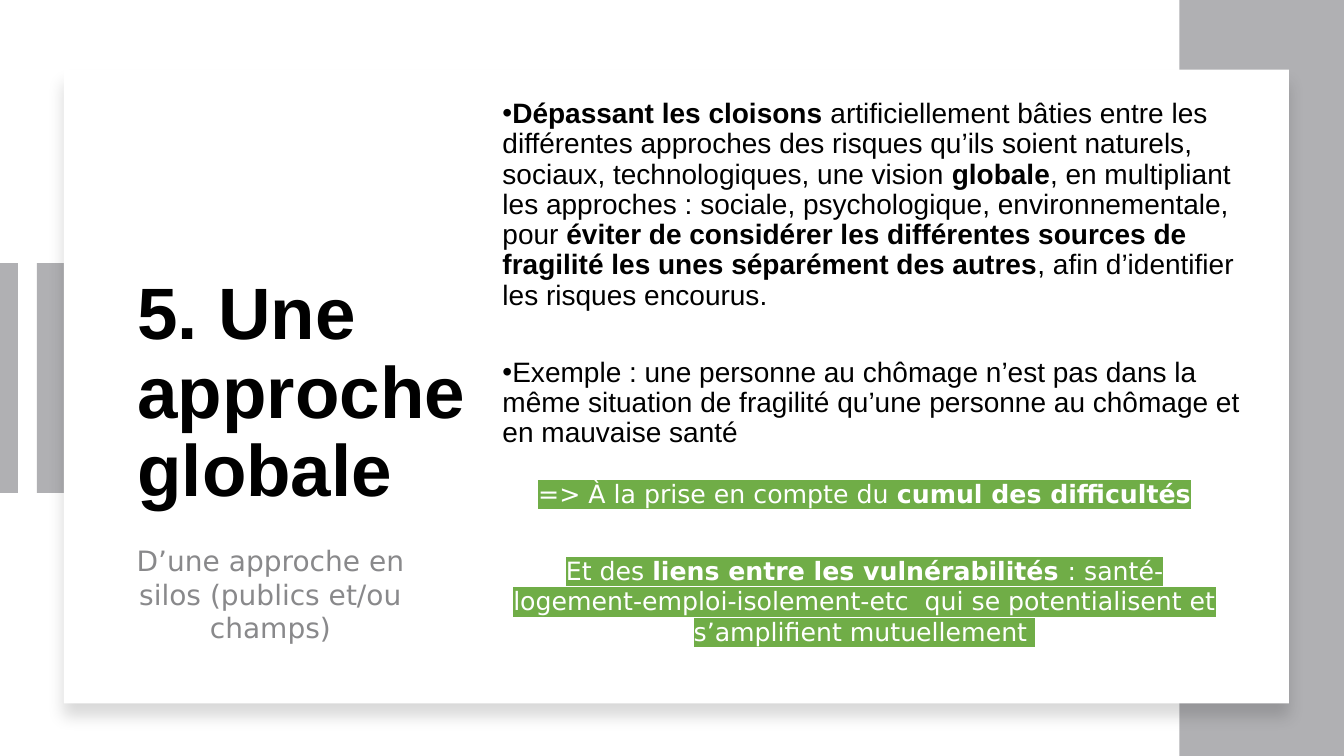
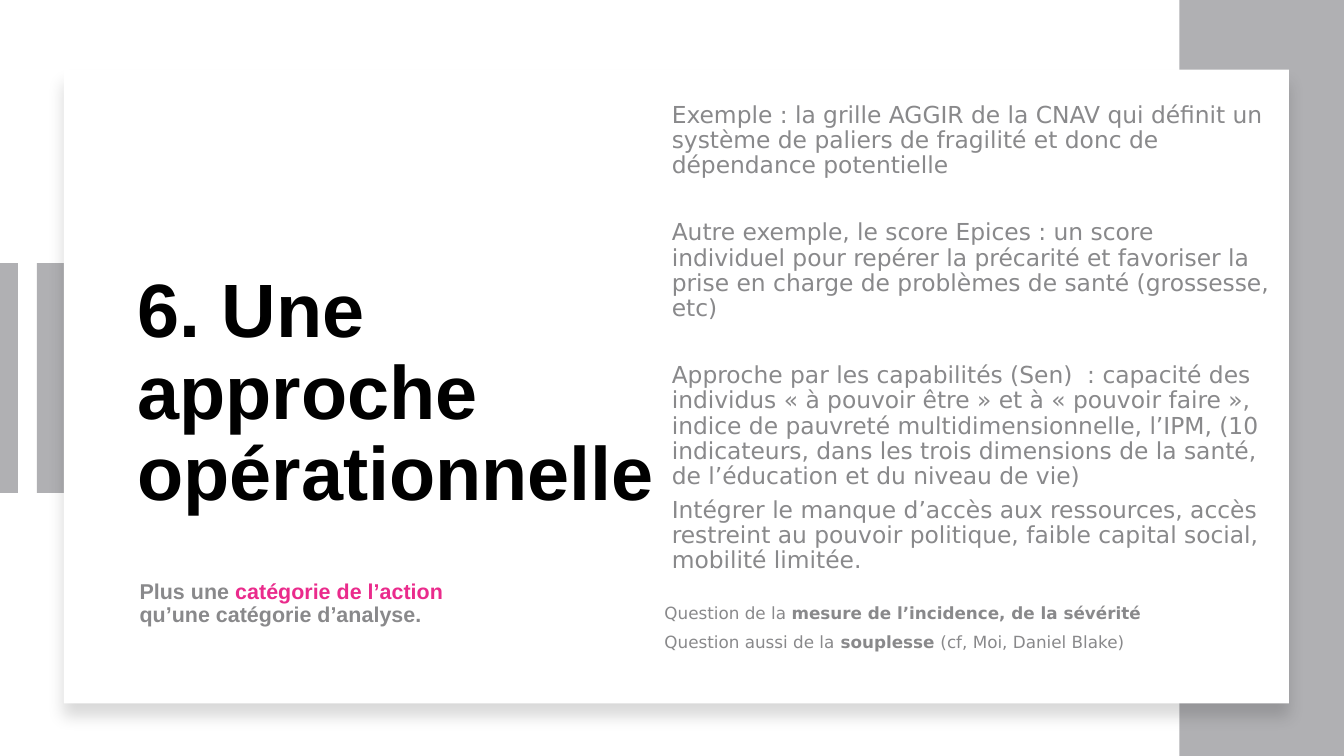
from lxml.etree import SubElement
from pptx import Presentation
from pptx.dml.color import RGBColor
from pptx.enum.shapes import MSO_CONNECTOR as Connector, MSO_SHAPE as Preset
from pptx.enum.text import MSO_ANCHOR as Anchor, PP_ALIGN as Align
from pptx.oxml.ns import qn
from pptx.util import Inches, Pt

COLORS = {
    "paper": "FFFFFF",
    "band": "B0B0B3",
    "ink": "000000",
    "muted": "89898B",
    "accent": "EA2B8C",
    "marker": "70AD47",
}
HEADING_FONT = "Arial"
TEXT_FONT = "DejaVu Sans"


def color(name):
    return RGBColor.from_string(COLORS[name])


def add_color(parent, name):
    return SubElement(parent, qn("a:srgbClr"), val=COLORS[name])


def write_runs(paragraph, text, size=20, font=TEXT_FONT, ink="muted", bold=False,
               marker=None, accent=None):
    """Write text whose **marked** parts take the accent colour, or else the bold weight."""
    for position, part in enumerate(text.split("**")):
        if not part:
            continue
        marked = position % 2 == 1
        run = paragraph.add_run()
        run.text = part
        run.font.size = Pt(size)
        run.font.name = font
        run.font.bold = bold or marked
        run.font.color.rgb = color(accent if marked and accent else ink)
        if marker:
            properties = run._r.get_or_add_rPr()
            highlight = SubElement(properties, qn("a:highlight"))
            add_color(highlight, marker)
            properties.find(qn("a:solidFill")).addnext(highlight)


class Deck:
    """Holds the style and the current slide; lengths are percentages of the slide."""

    def __init__(self):
        self.presentation = Presentation()
        self.presentation.slide_width = Inches(13.33)
        self.presentation.slide_height = Inches(7.5)
        self.slide = None

    def across(self, share):
        return round(self.presentation.slide_width * share / 100)

    def down(self, share):
        return round(self.presentation.slide_height * share / 100)

    def frame(self, left, top, width, height):
        return self.across(left), self.down(top), self.across(width), self.down(height)

    def block(self, *place, fill="band"):
        shape = self.slide.shapes.add_shape(Preset.RECTANGLE, *self.frame(*place))
        shape.shadow.inherit = False
        shape.fill.solid()
        shape.fill.fore_color.rgb = color(fill)
        shape.line.fill.background()
        return shape

    def stripe(self, left, top, height):
        x, y, _, length = self.frame(left, top, 0, height)
        connector = self.slide.shapes.add_connector(Connector.STRAIGHT, x, y, x, y + length)
        connector.line.color.rgb = color("band")
        connector.line.width = Pt(14)
        SubElement(connector._element.spPr, qn("a:effectLst"))

    def card(self, *place):
        shape = self.block(*place, fill="paper")
        effects = shape._element.spPr.find(qn("a:effectLst"))
        shadow = SubElement(effects, qn("a:outerShdw"), blurRad=str(Pt(11)),
                            dist=str(Pt(10)), dir="5400000", algn="t", rotWithShape="0")
        SubElement(add_color(shadow, "ink"), qn("a:alpha"), val="15000")

    def text(self, place, paragraphs, anchor=Anchor.TOP, align=Align.LEFT, spacing=None,
             gaps=(), bullet=False, **style):
        frame = self.slide.shapes.add_textbox(*self.frame(*place)).text_frame
        frame.word_wrap = True
        frame.vertical_anchor = anchor
        for index, content in enumerate(paragraphs):
            paragraph = frame.add_paragraph() if index else frame.paragraphs[0]
            if bullet:
                properties = paragraph._p.get_or_add_pPr()
                properties.set("marL", "0")
                properties.set("indent", "0")
                SubElement(properties, qn("a:buFont"), typeface=HEADING_FONT)
                SubElement(properties, qn("a:buChar"), char="•")
            paragraph.alignment = align
            if spacing:
                paragraph.line_spacing = spacing
            paragraph.space_after = Pt(gaps[index] if index < len(gaps) else 6)
            write_runs(paragraph, content, **style)

    def start(self, title, title_width, title_size):
        self.slide = self.presentation.slides.add_slide(self.presentation.slide_layouts[6])
        self.block(2.75, 34.8, 2.55, 30.4)
        self.stripe(0.6, 34.8, 30.4)
        self.block(87.75, 0, 12.25, 100)
        self.card(4.75, 9.2, 91.15, 83.85)
        self.text((9.5, 18.05, title_width, 68.3), [title], anchor=Anchor.MIDDLE, gaps=(0,),
                  spacing=0.9, size=title_size, font=HEADING_FONT, ink="ink", bold=True)


def global_approach(deck):
    deck.start("5. Une approche globale", 32.85, 52)
    deck.text((36.65, 12.5, 56.4, 50), [
        "**Dépassant les cloisons **artificiellement bâties entre les différentes approches "
        "des risques qu’ils soient naturels, sociaux, technologiques, une vision **globale**, "
        "en multipliant les approches : sociale, psychologique, environnementale, pour "
        "**éviter de considérer les différentes sources de fragilité les unes séparément "
        "des autres**, afin d’identifier les risques encourus.",
        "Exemple : une personne au chômage n’est pas dans la même situation de fragilité "
        "qu’une personne au chômage et en mauvaise santé",
    ], spacing=0.9, gaps=(33.6,), bullet=True, font=HEADING_FONT, ink="ink")
    deck.text((36.65, 62.6, 55.35, 23.7), [
        "=> À la prise en compte du **cumul des difficultés**",
        "Et des **liens entre les vulnérabilités **: santé-logement-emploi-isolement-etc  "
        "qui se potentialisent et s’amplifient mutuellement ",
    ], align=Align.CENTER, gaps=(33.5,), size=18, ink="paper", marker="marker")
    deck.text((7.75, 71.25, 24.75, 14.8), ["D’une approche en silos (publics et/ou champs)"],
              align=Align.CENTER)


def operational_approach(deck):
    deck.start("6. Une approche opérationnelle", 43.5, 54)
    deck.text((49.25, 12.95, 45.95, 62), [
        "Exemple : la grille AGGIR de la CNAV qui définit un système de paliers de fragilité "
        "et donc de dépendance potentielle",
        "Autre exemple, le score Epices : un score individuel pour repérer la précarité et "
        "favoriser la prise en charge de problèmes de santé (grossesse, etc)",
        "Approche par les capabilités (Sen)  : capacité des individus « à pouvoir être » et "
        "à « pouvoir faire », indice de pauvreté multidimensionnelle, l’IPM, "
        "(10 indicateurs, dans les trois dimensions de la santé, de l’éducation et du niveau "
        "de vie)",
        "Intégrer le manque d’accès aux ressources, accès restreint au pouvoir politique, "
        "faible capital social, mobilité limitée.",
    ], spacing=0.9, gaps=(30, 30), size=16.7)
    deck.text((9.65, 76.2, 24.9, 7.5),
              ["Plus une **catégorie de l’action** qu’une catégorie d’analyse."],
              spacing=0.9, size=15.3, font=HEADING_FONT, bold=True, accent="accent")
    deck.text((48.7, 79.1, 46.5, 7.9), [
        "Question de la **mesure de l’incidence, de la sévérité**",
        "Question aussi de la** souplesse **(cf, Moi, Daniel Blake)",
    ], size=12)


def main():
    deck = Deck()
    global_approach(deck)
    operational_approach(deck)
    deck.presentation.save("out.pptx")


if __name__ == "__main__":
    main()
